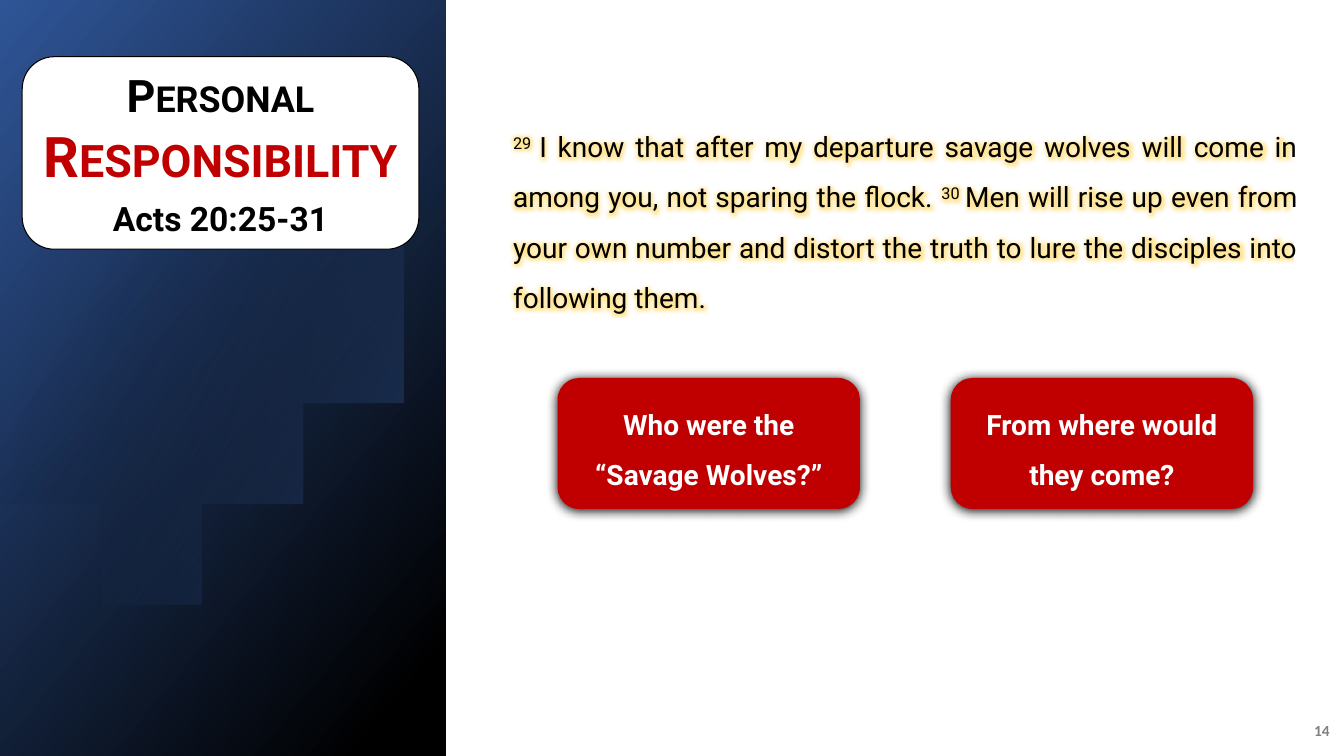
from math import acos, cos, pi, sin

from lxml import etree
from pptx import Presentation
from pptx.dml.color import RGBColor
from pptx.enum.shapes import MSO_SHAPE
from pptx.enum.text import MSO_ANCHOR, PP_ALIGN
from pptx.oxml import parse_xml
from pptx.oxml.ns import nsdecls, qn
from pptx.util import Inches, Pt

WIDTH, HEIGHT = 13.33, 7.5
COLORS = {
    "white": "FFFFFF", "black": "000000", "red": "C00000", "navy": "2F5597",
    "blue": "4472C4", "gray": "808080", "gold": "FFC000",
}
BODY = {"size": Pt(20), "name": "Roboto"}
BOLD = {**BODY, "bold": True}


def color(name):
    return RGBColor.from_string(COLORS[name])


def add_paragraph(frame, alignment, first=False, **formats):
    paragraph = frame.paragraphs[0] if first else frame.add_paragraph()
    paragraph.alignment = alignment
    for key, value in formats.items():
        setattr(paragraph, key, value)
    return paragraph


def add_run(paragraph, text, color_name, formats, **attributes):
    run = paragraph.add_run()
    run.text = text
    for key, value in formats.items():
        setattr(run.font, key, value)
    run.font.color.rgb = color(color_name)
    for key, value in attributes.items():
        run.font._element.set(key, value)
    return run


def set_frame(shape, anchor, margins):
    frame = shape.text_frame
    frame.word_wrap = True
    frame.vertical_anchor = anchor
    for side, margin in zip(("left", "top", "right", "bottom"), margins):
        setattr(frame, f"margin_{side}", Inches(margin))
    return frame


def add_box(slide, preset, box, fill):
    shape = slide.shapes.add_shape(preset, *map(Inches, box))
    shape.shadow.inherit = False
    shape.fill.solid()
    shape.fill.fore_color.rgb = color(fill)
    shape.line.fill.background()
    return shape


def set_gradient(shape, stops, angle):
    """Stops are (position, color name, opacity), all in percent."""
    marks = "".join(
        f'<a:gs pos="{position * 1000}"><a:srgbClr val="{COLORS[name]}">'
        f'<a:alpha val="{opacity * 1000}"/></a:srgbClr></a:gs>'
        for position, name, opacity in stops)
    gradient = parse_xml(
        f'<a:gradFill {nsdecls("a")} rotWithShape="1"><a:gsLst>{marks}</a:gsLst>'
        f'<a:lin ang="{angle * 60000}" scaled="0"/></a:gradFill>')
    properties = shape._element.spPr
    properties.replace(properties.find(qn("a:solidFill")), gradient)


def add_shadow(shape):
    effects = shape._element.spPr.find(qn("a:effectLst"))
    shadow = etree.SubElement(effects, qn("a:outerShdw"), blurRad=str(Pt(8.5)),
                              dist=str(Pt(1)), dir="5400000", algn="t", rotWithShape="0")
    etree.SubElement(shadow, qn("a:srgbClr"), val=COLORS["black"])


def add_glow(run):
    run.font._element.find(qn("a:solidFill")).addnext(parse_xml(
        f'<a:effectLst {nsdecls("a")}><a:glow rad="{Pt(8)}">'
        f'<a:srgbClr val="{COLORS["gold"]}"><a:alpha val="40000"/></a:srgbClr>'
        '</a:glow></a:effectLst>'))


def add_side_panel(slide, box):
    left, top, width, height = box
    panel = add_box(slide, MSO_SHAPE.RECTANGLE, box, "navy")
    set_gradient(panel, [(0, "navy", 100), (92, "black", 100)], 40)

    # Disc cut off by the panel's left edge
    center_x, center_y, radius = left + 1.45, top + 0.45 * height, 2.28
    limit, steps = acos((left - center_x) / radius), 120
    points = []
    for step in range(steps + 1):
        angle = limit * (2 * step / steps - 1)
        points.append((center_x + radius * cos(angle), center_y + radius * sin(angle)))
    builder = slide.shapes.build_freeform(*points[0], scale=Inches(1))
    builder.add_line_segments(points[1:], close=True)
    disc = builder.convert_to_shape()
    disc.shadow.inherit = False
    disc.fill.solid()
    disc.line.fill.background()
    set_gradient(disc, [(29, "black", 0), (100, "blue", 43)], 30)

    # Title card
    card = add_box(slide, MSO_SHAPE.ROUNDED_RECTANGLE,
                   (left + 0.05 * width, top + 0.075 * height, 0.89 * width, 1.91), "white")
    card.line.color.rgb = color("black")
    card.line.width = Pt(0.75)
    frame = set_frame(card, MSO_ANCHOR.MIDDLE, (0, 0, 0, 0))
    title = add_paragraph(frame, PP_ALIGN.CENTER, True, space_after=Pt(6))
    add_run(title, "Personal", "black", {**BOLD, "size": Pt(32)}, cap="small")
    title.add_line_break()
    add_run(title, "Responsibility", "red", {**BOLD, "size": Pt(40)}, cap="small")
    reference = add_paragraph(frame, PP_ALIGN.CENTER, space_after=Pt(6))
    add_run(reference, "Acts 20:25-31", "black", {**BOLD, "size": Pt(24)})


def add_scripture(slide, box, verses):
    text_box = slide.shapes.add_textbox(*map(Inches, box))
    frame = set_frame(text_box, MSO_ANCHOR.TOP, (0.1, 0.05, 0.1, 0.05))
    paragraph = add_paragraph(frame, PP_ALIGN.JUSTIFY, True, line_spacing=1.5)
    for number, verse in verses:
        add_glow(add_run(paragraph, number, "black", BODY, baseline="30000"))
        add_glow(add_run(paragraph, verse, "black", BODY))


def add_questions(slide, box, questions):
    left, top, width, height = box
    button_width = 3
    pitch = (width - button_width) / (len(questions) - 1)
    for column, question in enumerate(questions):
        button = add_box(slide, MSO_SHAPE.ROUNDED_RECTANGLE,
                         (left + column * pitch, top, button_width, height), "red")
        add_shadow(button)
        frame = set_frame(button, MSO_ANCHOR.MIDDLE, (0.1, 0, 0.1, 0.05))
        paragraph = add_paragraph(frame, PP_ALIGN.CENTER, True, line_spacing=1.5)
        add_run(paragraph, question, "white", BOLD)


def add_page_number(slide, box, number):
    text_box = slide.shapes.add_textbox(*map(Inches, box))
    frame = set_frame(text_box, MSO_ANCHOR.MIDDLE, (0.1, 0.05, 0.1, 0.05))
    paragraph = add_paragraph(frame, PP_ALIGN.RIGHT, True, space_after=Pt(6))
    add_run(paragraph, number, "gray", {"size": Pt(11), "name": "Calibri", "bold": True})


def main():
    presentation = Presentation()
    presentation.slide_width, presentation.slide_height = Inches(WIDTH), Inches(HEIGHT)
    slide = presentation.slides.add_slide(presentation.slide_layouts[6])

    add_page_number(slide, (0.96 * WIDTH, 0.94 * HEIGHT, 0.49, 0.4), "14")
    add_side_panel(slide, (0, 0, 4.42, HEIGHT))
    add_scripture(slide, (4.99, 1.07, 7.98, 2.06), [
        ("29 ", "I know that after my departure savage wolves will come in among you, "
                "not sparing the flock. "),
        ("30 ", "Men will rise up even from your own number and distort the truth to "
                "lure the disciples into following them."),
    ])
    add_questions(slide, (5.53, HEIGHT / 2, 6.9, 1.3),
                  ["Who were the “Savage Wolves?”", "From where would they come?"])
    presentation.save("out.pptx")


if __name__ == "__main__":
    main()
